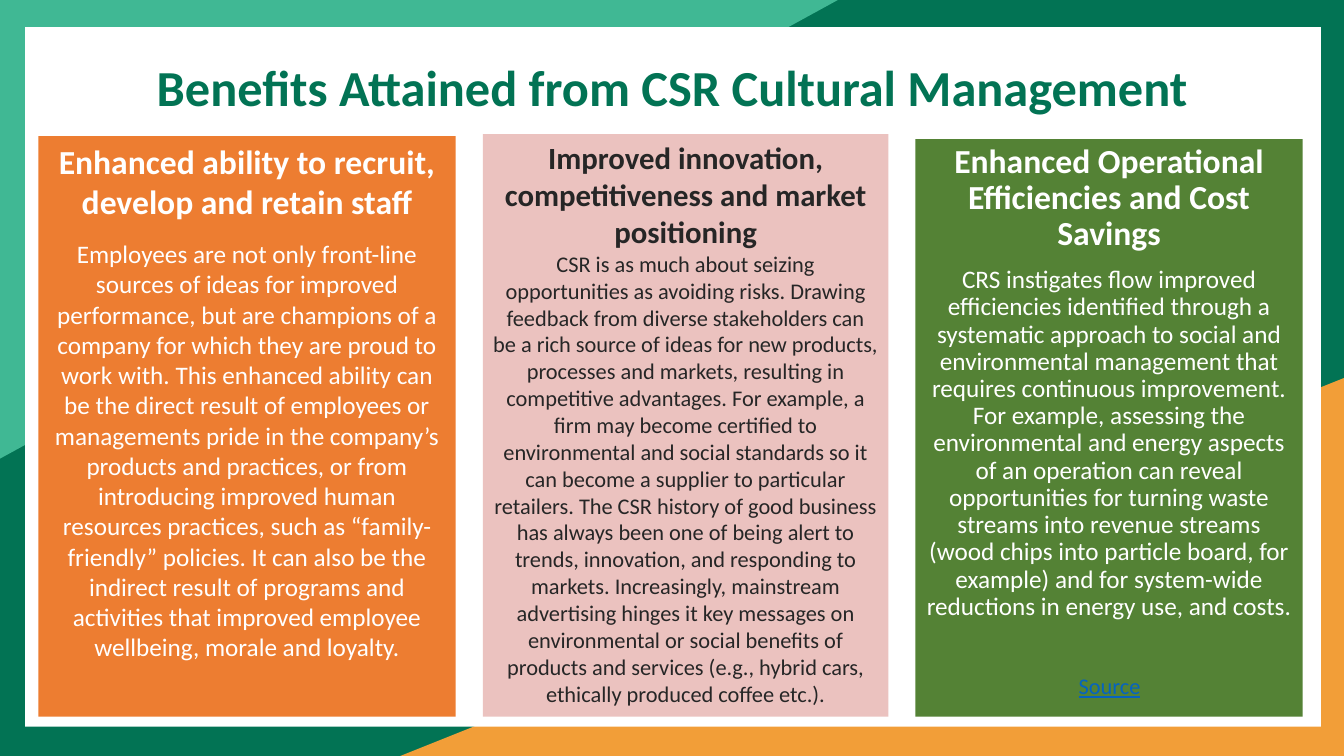
"""Build the slide on the benefits of CSR cultural management."""
from pptx import Presentation
from pptx import util as u
from pptx.dml.color import RGBColor
from pptx.enum import shapes, text
from pptx.oxml.xmlchemy import OxmlElement

COLORS = {
    "deep_green": "027354", "mint": "40B894", "amber": "F29E38",
    "white": "FFFFFF", "pink": "EBC2BF", "orange": "ED7D31",
    "leaf": "548235", "dark": "262626", "link": "0563C1",
}
RECT = shapes.MSO_SHAPE.RECTANGLE
TRIANGLE = shapes.MSO_SHAPE.ISOSCELES_TRIANGLE
BACKDROP = [
    (RECT, (0, 0, 13.33, 7.5), "deep_green", 0),
    (TRIANGLE, (3.97, 3.75, 9.36, 3.75), "amber", 0),
    (TRIANGLE, (0, 0, 8.31, 4.55), "mint", 180),
    (RECT, (0.25, 0.27, 12.85, 6.94), "white", 0),
]
TITLE = "Benefits Attained from CSR Cultural Management"
COLUMN_BOTTOM = 7.11
COLUMNS = [
    {
        "left": 4.79, "top": 1.33, "width": 4.02, "fill": "pink", "color": "dark",
        "sizes": (22, 16), "line": 1.0, "gap": 0, "placeholder": True,
        "heading": "Improved innovation, competitiveness and market positioning",
        "body": "CSR is as much about seizing opportunities as avoiding risks. "
                "Drawing feedback from diverse stakeholders can be a rich source of ideas "
                "for new products, processes and markets, resulting in competitive "
                "advantages. For example, a firm may become certified to environmental and "
                "social standards so it can become a supplier to particular retailers. The "
                "CSR history of good business has always been one of being alert to trends, "
                "innovation, and responding to markets. Increasingly, mainstream advertising "
                "hinges it key messages on environmental or social benefits of products and "
                "services (e.g., hybrid cars, ethically produced coffee etc.).",
    },
    {
        "left": 0.38, "top": 1.35, "width": 4.14, "fill": "orange", "color": "white",
        "sizes": (24, 18), "line": 1.0, "gap": 12, "placeholder": False,
        "heading": "Enhanced ability to recruit, develop and retain staff",
        "body": "Employees are not only front-line sources of ideas for improved "
                "performance, but are champions of a company for which they are proud to "
                "work with. This enhanced ability can be the direct result of employees or "
                "managements pride in the company’s products and practices, or from "
                "introducing improved human resources practices, such as “family-friendly” "
                "policies. It can also be the indirect result of programs and activities "
                "that improved employee wellbeing, morale and loyalty.",
    },
    {
        "left": 9.08, "top": 1.38, "width": 3.84, "fill": "leaf", "color": "white",
        "sizes": (24, 18), "line": 0.9, "gap": 10, "placeholder": False,
        "heading": "Enhanced Operational Efficiencies and Cost Savings",
        "body": "CRS instigates flow improved efficiencies identified through a systematic "
                "approach to social and environmental management that requires continuous "
                "improvement. For example, assessing the environmental and energy aspects "
                "of an operation can reveal opportunities for turning waste streams into "
                "revenue streams (wood chips into particle board, for example) and for "
                "system-wide reductions in energy use, and costs.",
    },
]


def rgb(name):
    return RGBColor.from_string(COLORS[name])


def place(shape, box):
    shape.left, shape.top, shape.width, shape.height = map(u.Inches, box)


def fill_shape(shape, color):
    shape.fill.solid()
    shape.fill.fore_color.rgb = rgb(color)
    shape.line.fill.background()


def add_block(slide, kind, box, color):
    shape = slide.shapes.add_shape(kind, *map(u.Inches, box))
    shape.shadow.inherit = False
    fill_shape(shape, color)
    return shape


def bring_forward(shape):
    shape.element.getparent().append(shape.element)


def write(shape, lines, color, spacing=1.0, gap=0):
    """Write (words, size, bold, underline) lines as centred paragraphs."""
    frame = shape.text_frame
    frame.word_wrap = True
    frame.auto_size = text.MSO_AUTO_SIZE.NONE
    frame.vertical_anchor = text.MSO_ANCHOR.TOP
    for index, (words, size, bold, underline) in enumerate(lines):
        paragraph = frame.paragraphs[0] if index == 0 else frame.add_paragraph()
        paragraph.alignment = text.PP_ALIGN.CENTER
        paragraph.line_spacing = spacing
        paragraph.space_before = u.Pt(gap if index else 0)
        paragraph.space_after = u.Pt(0)
        run = paragraph.add_run()
        run.text = words
        run.font.name = "Calibri"
        run.font.size = u.Pt(size)
        run.font.bold = bold
        run.font.underline = underline
        run.font.color.rgb = rgb(color)


def remove_bullets(shape):
    for paragraph in shape.text_frame.paragraphs:
        properties = paragraph._p.get_or_add_pPr()
        properties.set("marL", "0")
        properties.set("indent", "0")
        properties.append(OxmlElement("a:buNone"))


def main():
    presentation = Presentation()
    presentation.slide_width = u.Inches(13.33)
    presentation.slide_height = u.Inches(7.5)
    slide = presentation.slides.add_slide(presentation.slide_layouts[1])
    title, body = slide.placeholders

    for kind, box, color, rotation in BACKDROP:
        shape = add_block(slide, kind, box, color)
        shape.rotation = rotation
        if kind == TRIANGLE:
            shape.adjustments[0] = 1

    place(title, (0.93, 0.39, 11.48, 1.23))
    bring_forward(title)
    write(title, [(TITLE, 36, True, False)], "deep_green", 1.2)

    for column in COLUMNS:
        top = column["top"]
        box = (column["left"], top, column["width"], COLUMN_BOTTOM - top)
        if column["placeholder"]:
            shape = body
            place(shape, box)
            fill_shape(shape, column["fill"])
            bring_forward(shape)
        else:
            shape = add_block(slide, RECT, box, column["fill"])
        heading_size, body_size = column["sizes"]
        lines = [(column["heading"], heading_size, True, False),
                 (column["body"], body_size, False, False)]
        write(shape, lines, column["color"], column["line"], column["gap"])
    remove_bullets(body)

    source = slide.shapes.add_textbox(*map(u.Inches, (9.85, 6.62, 2.31, 0.37)))
    write(source, [("Source", 16, False, True)], "link")
    presentation.save("out.pptx")


if __name__ == "__main__":
    main()
